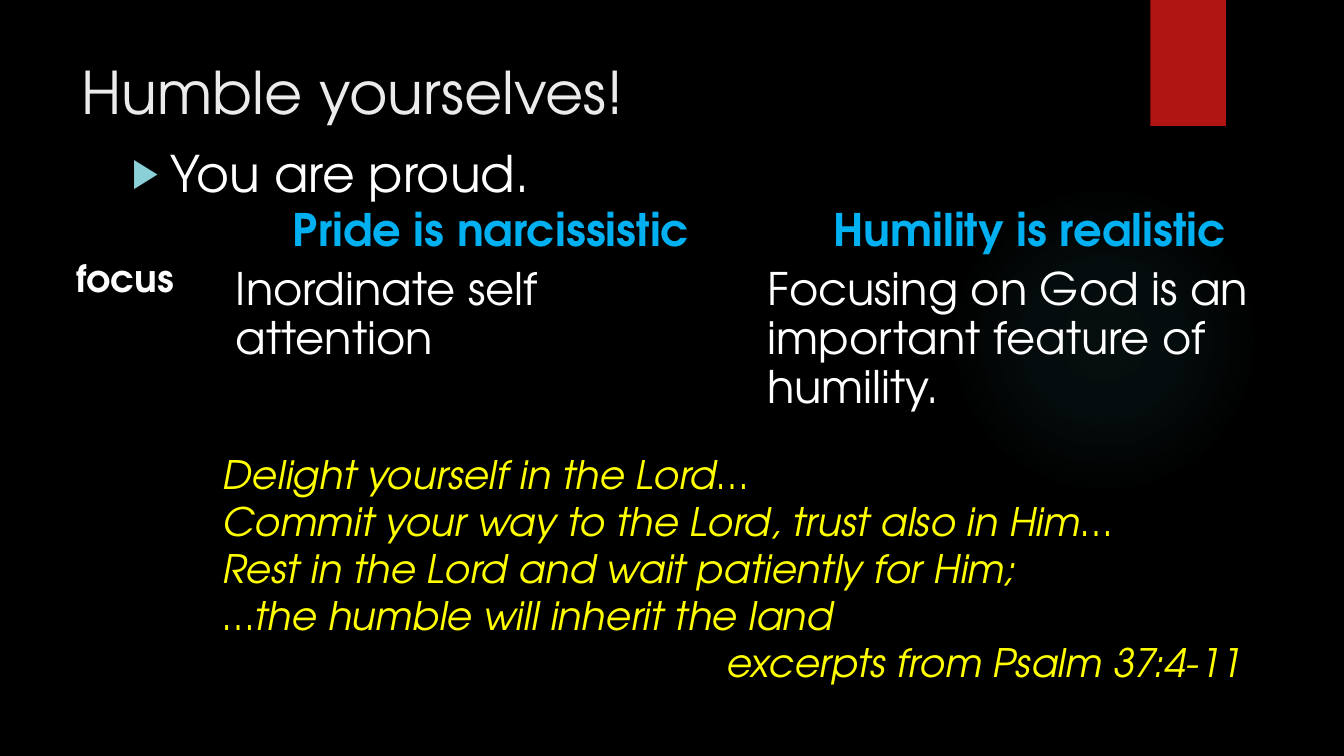
from dataclasses import dataclass

from lxml import etree
from pptx import Presentation
from pptx.dml.color import RGBColor
from pptx.enum.shapes import MSO_SHAPE
from pptx.enum.text import MSO_ANCHOR, PP_ALIGN
from pptx.oxml.ns import qn
from pptx.util import Inches, Pt

RECT, OVAL = MSO_SHAPE.RECTANGLE, MSO_SHAPE.OVAL
TOP = MSO_ANCHOR.TOP
LEFT, MID, RIGHT, FULL = (PP_ALIGN.LEFT, PP_ALIGN.CENTER, PP_ALIGN.RIGHT,
                          PP_ALIGN.JUSTIFY)
PLAIN = "{2D5ABB26-0587-4C30-8999-92F81FD0307C}"


@dataclass(frozen=True)
class Theme:
    font: str = "TeX Gyre Adventor"
    back: str = "000000"
    title: str = "EBEBEB"
    text: str = "FFFFFF"
    head: str = "00B0F0"
    verse: str = "FFFF00"
    mark: str = "8AD0D6"
    ribbon: str = "B01513"
    glow: str = "50B9C1"
    title_size: int = 42
    point_size: int = 36
    cell_size: int = 32
    label_size: int = 27
    verse_size: int = 28
    cell_line: int = 35


def add(parent, tag, **attrs):
    node = etree.SubElement(parent, qn(tag))
    for key, value in attrs.items():
        node.set(key, str(value))
    return node


def write(para, text, size, color, font, bold=False, italic=False,
          align=LEFT, line=None):
    para.alignment = align
    if line:
        para.line_spacing = line
    run = para.add_run()
    run.text = text
    style = run.font
    style.name, style.size = font, Pt(size)
    style.bold, style.italic = bold, italic
    style.color.rgb = RGBColor.from_string(color)


class Deck:
    def __init__(self, theme):
        self.theme = theme
        self.file = Presentation()
        self.file.slide_width = Inches(13.33)
        self.file.slide_height = Inches(7.5)
        self.slide = self.file.slides.add_slide(self.file.slide_layouts[5])
        fill = self.slide.background.fill
        fill.solid()
        fill.fore_color.rgb = RGBColor.from_string(theme.back)

    def shape(self, kind, box, color):
        item = self.slide.shapes.add_shape(kind, *map(Inches, box))
        item.shadow.inherit = False
        item.line.fill.background()
        item.fill.solid()
        item.fill.fore_color.rgb = RGBColor.from_string(color)
        return item

    def glow(self, box, color, stops):
        """Draw a disc that fades out from its centre."""
        props = self.shape(OVAL, box, color).element.spPr
        old = props.find(qn("a:solidFill"))
        grad = etree.Element(qn("a:gradFill"), rotWithShape="1")
        props.replace(old, grad)
        row = add(grad, "a:gsLst")
        for place, alpha in stops:
            stop = add(row, "a:gs", pos=place * 1000)
            tint = add(stop, "a:srgbClr", val=color)
            add(tint, "a:alpha", val=alpha * 1000)
        path = add(grad, "a:path", path="circle")
        add(path, "a:fillToRect", l=50000, t=50000, r=50000, b=50000)

    def title(self, box, text):
        item = self.slide.shapes.title
        item.left, item.top, item.width, item.height = map(Inches, box)
        frame = item.text_frame
        frame.word_wrap, frame.vertical_anchor = True, TOP
        write(frame.paragraphs[0], text, self.theme.title_size,
              self.theme.title, self.theme.font)

    def frame(self, box):
        item = self.slide.shapes.add_textbox(*map(Inches, box))
        item.text_frame.word_wrap = True
        return item.text_frame

    def point(self, box, text):
        para = self.frame(box).paragraphs[0]
        props = para._p.get_or_add_pPr()
        hang = Inches(0.38)
        props.set("marL", str(hang))
        props.set("indent", str(-hang))
        add(add(props, "a:buClr"), "a:srgbClr", val=self.theme.mark)
        add(props, "a:buSzPct", val=80000)
        add(props, "a:buFont", typeface="Arial")
        add(props, "a:buChar", char="▶")
        write(para, text, self.theme.point_size, self.theme.text,
              self.theme.font, line=1.1)

    def verse(self, box, lines, credit):
        frame = self.frame(box)
        for i, text in enumerate([*lines, credit]):
            para = frame.add_paragraph() if i else frame.paragraphs[0]
            write(para, text, self.theme.verse_size, self.theme.verse,
                  self.theme.font, italic=True,
                  align=RIGHT if text == credit else FULL)

    def table(self, box, widths, heights, rows):
        theme = self.theme
        grid = self.slide.shapes.add_table(
            len(rows), len(widths), *map(Inches, box)).table
        grid._tbl.tblPr.find(qn("a:tableStyleId")).text = PLAIN
        grid.horz_banding = False
        for col, width in zip(grid.columns, widths):
            col.width = Inches(width)
        for row, height in zip(grid.rows, heights):
            row.height = Inches(height)
        for i, row in enumerate(rows):
            for j, text in enumerate(row):
                cell = grid.cell(i, j)
                cell.fill.background()
                if not text:
                    continue
                head, label = i == 0, j == 0
                write(cell.text_frame.paragraphs[0], text,
                      theme.label_size if label else theme.cell_size,
                      theme.head if head else theme.text, theme.font,
                      bold=head or label, align=MID if head or label else LEFT,
                      line=None if label else Pt(theme.cell_line))


def main():
    theme = Theme()
    deck = Deck(theme)
    deck.glow((9.41, 1.83, 3.08, 3.08), theme.glow,
              [(0, 7), (36, 6), (69, 0), (100, 0)])
    deck.shape(RECT, (11.41, 0, 0.75, 1.25), theme.ribbon)
    deck.title((0.71, 0.5, 10.29, 0.91), "Humble yourselves!")
    deck.point((1.21, 1.3, 11.21, 0.8), "You are proud.")
    deck.table((0.24, 1.99, 12.68, 2.19), (2, 5.27, 5.41), (0.59, 1.6), [
        ("", "Pride is narcissistic", "Humility is realistic"),
        ("focus", "Inordinate self attention",
         "Focusing on God is an important feature of humility."),
    ])
    deck.verse((2.11, 4.42, 10.31, 2.46), [
        "Delight yourself in the Lord…",
        "Commit your way to the Lord, trust also in Him…",
        "Rest in the Lord and wait patiently for Him;",
        "…the humble will inherit the land",
    ], "excerpts from Psalm 37:4-11")
    deck.file.save("out.pptx")


if __name__ == "__main__":
    main()
